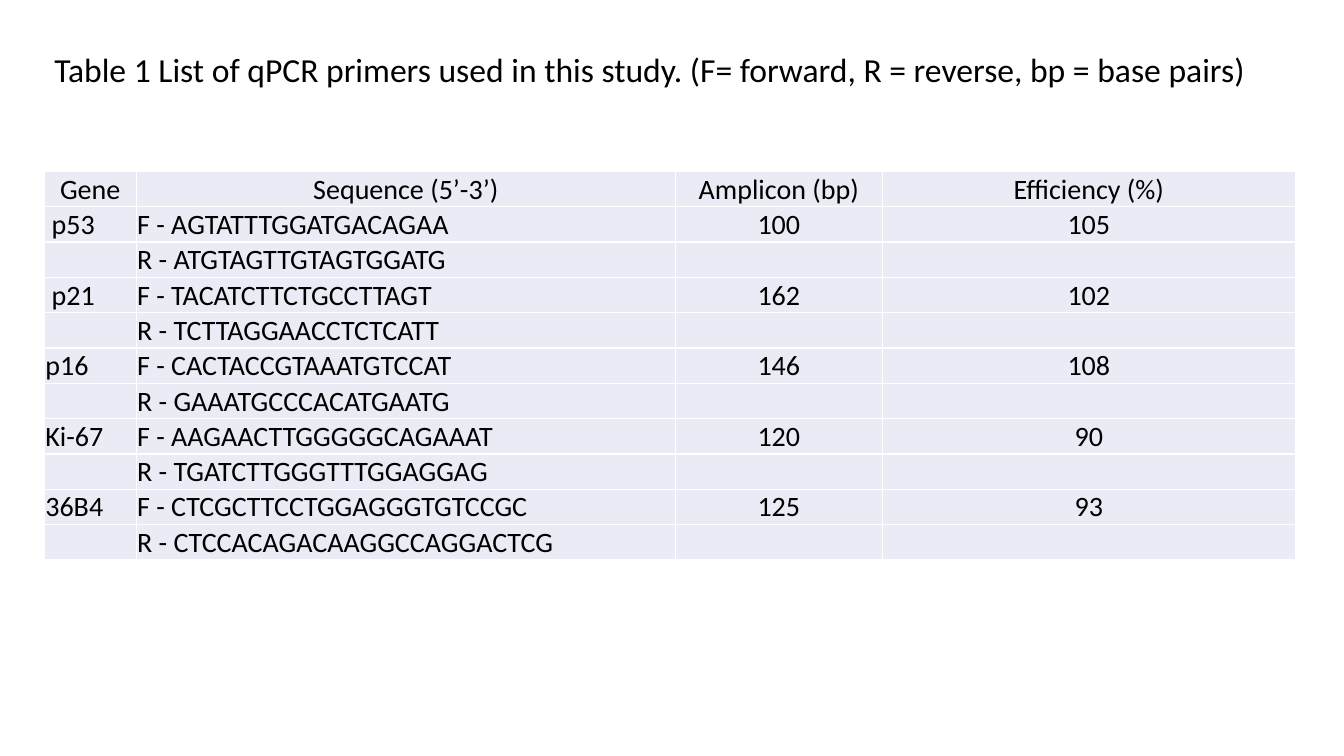
from pptx import Presentation
from pptx.dml.color import RGBColor
from pptx.enum import text
from pptx.util import Inches, Pt

BLACK = RGBColor(0x00, 0x00, 0x00)
PALE_BLUE = RGBColor(0xE9, 0xEB, 0xF5)

HEADER = ("Gene", "Sequence (5’-3’)", "Amplicon (bp)", "Efficiency (%)")
PRIMERS = [
    (" p53", "AGTATTTGGATGACAGAA", "ATGTAGTTGTAGTGGATG", "100", "105"),
    (" p21", "TACATCTTCTGCCTTAGT", "TCTTAGGAACCTCTCATT", "162", "102"),
    ("p16", "CACTACCGTAAATGTCCAT", "GAAATGCCCACATGAATG", "146", "108"),
    ("Ki-67", "AAGAACTTGGGGGCAGAAAT", "TGATCTTGGGTTTGGAGGAG", "120", "90"),
    ("36B4", "CTCGCTTCCTGGAGGGTGTCCGC", "CTCCACAGACAAGGCCAGGACTCG", "125", "93"),
]
COL_WIDTHS = (0.91, 5.35, 2.05, 4.1)
ROW_HEIGHT = 0.34


def add_run(p, content, size):
    r = p.add_run()
    r.text = content
    r.font.name = "Calibri"
    r.font.size = Pt(size)
    r.font.color.rgb = BLACK


prs = Presentation()
prs.slide_width = Inches(13.33)
prs.slide_height = Inches(7.5)
s = prs.slides.add_slide(prs.slide_layouts[6])

rows = [HEADER]
for gene, forward, reverse, amplicon, efficiency in PRIMERS:
    rows.append((gene, "F - " + forward, amplicon, efficiency))
    rows.append(("", "R - " + reverse, "", ""))

table = s.shapes.add_table(
    len(rows), len(COL_WIDTHS), Inches(0.44), Inches(1.7),
    Inches(sum(COL_WIDTHS)), Inches(ROW_HEIGHT * len(rows))).table
table.first_row = False
table.horz_banding = False
for column, width in zip(table.columns, COL_WIDTHS):
    column.width = Inches(width)

for i, row in enumerate(rows):
    table.rows[i].height = Inches(ROW_HEIGHT)
    for j, content in enumerate(row):
        cell = table.cell(i, j)
        cell.fill.solid()
        cell.fill.fore_color.rgb = PALE_BLUE
        cell.margin_left = cell.margin_top = cell.margin_right = Inches(0.01)
        cell.margin_bottom = 0
        cell.vertical_anchor = text.MSO_ANCHOR.BOTTOM
        if content:
            p = cell.text_frame.paragraphs[0]
            if i == 0 or j >= 2:
                p.alignment = text.PP_ALIGN.CENTER
            add_run(p, content, 20)

caption = s.shapes.add_textbox(Inches(0.44), Inches(0.44), Inches(12.55), Inches(0.5))
tf = caption.text_frame
tf.word_wrap = True
tf.auto_size = text.MSO_AUTO_SIZE.SHAPE_TO_FIT_TEXT
add_run(tf.paragraphs[0],
        "Table 1 List of qPCR primers used in this study. "
        "(F= forward, R = reverse, bp = base pairs)", 24)

prs.save("out.pptx")
